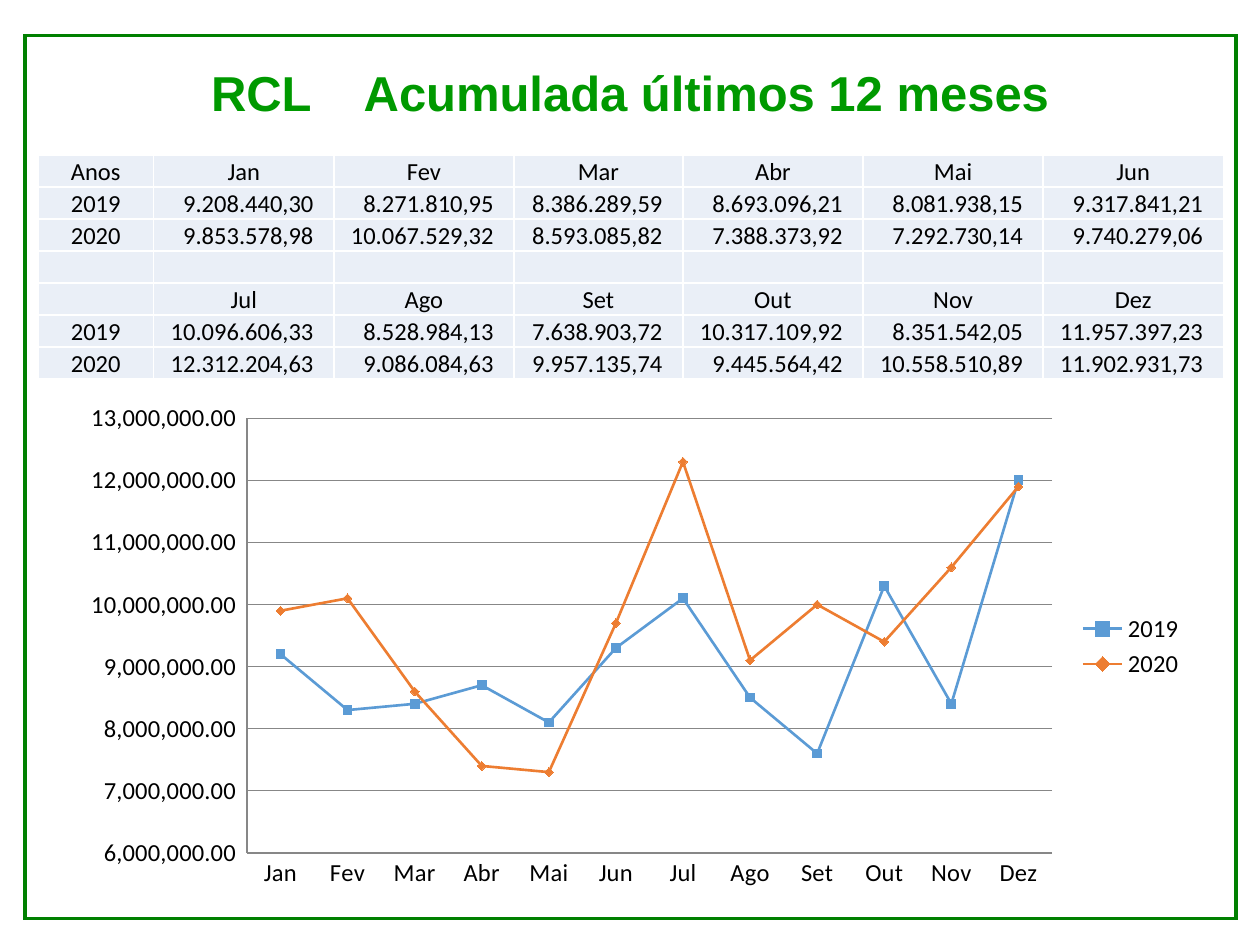
"""Build the slide on twelve-month accumulated revenue, with a table and a line chart."""
from dataclasses import dataclass

from lxml import etree
from pptx import Presentation
from pptx.chart.data import CategoryChartData
from pptx.dml.color import RGBColor
from pptx.enum.chart import XL_CHART_TYPE, XL_LEGEND_POSITION, XL_MARKER_STYLE, XL_TICK_MARK
from pptx.enum.shapes import MSO_SHAPE
from pptx.enum.text import MSO_ANCHOR, PP_ALIGN
from pptx.oxml import parse_xml
from pptx.oxml.ns import nsdecls, qn
from pptx.util import Inches, Pt

RECTANGLE = MSO_SHAPE.RECTANGLE
CENTER, RIGHT = PP_ALIGN.CENTER, PP_ALIGN.RIGHT
MIDDLE, BOTTOM = MSO_ANCHOR.MIDDLE, MSO_ANCHOR.BOTTOM
LINE_MARKERS = XL_CHART_TYPE.LINE_MARKERS
LEGEND_RIGHT = XL_LEGEND_POSITION.RIGHT
SQUARE, DIAMOND = XL_MARKER_STYLE.SQUARE, XL_MARKER_STYLE.DIAMOND
NO_TICK = XL_TICK_MARK.NONE


@dataclass(frozen=True)
class Theme:
    frame: RGBColor = RGBColor(0x00, 0x80, 0x00)
    title: RGBColor = RGBColor(0x00, 0x99, 0x00)
    text: RGBColor = RGBColor(0x00, 0x00, 0x00)
    cell: RGBColor = RGBColor(0xEA, 0xEF, 0xF7)
    border: RGBColor = RGBColor(0xFF, 0xFF, 0xFF)
    grid: RGBColor = RGBColor(0x87, 0x87, 0x87)
    series: tuple = (RGBColor(0x5B, 0x9B, 0xD5), RGBColor(0xED, 0x7D, 0x31))
    title_font: str = "Arial"
    body_font: str = "Calibri"
    title_size: Pt = Pt(28)
    body_size: Pt = Pt(14)


THEME = Theme()
MONTHS = ["Jan", "Fev", "Mar", "Abr", "Mai", "Jun",
          "Jul", "Ago", "Set", "Out", "Nov", "Dez"]
REVENUE = {
    "2019": [9208440.30, 8271810.95, 8386289.59, 8693096.21, 8081938.15, 9317841.21,
             10096606.33, 8528984.13, 7638903.72, 10317109.92, 8351542.05, 11957397.23],
    "2020": [9853578.98, 10067529.32, 8593085.82, 7388373.92, 7292730.14, 9740279.06,
             12312204.63, 9086084.63, 9957135.74, 9445564.42, 10558510.89, 11902931.73],
}
COLUMN_WIDTHS = [0.92, 1.43, 1.43, 1.34, 1.43, 1.43, 1.43]
CHART_WIDTH, CHART_HEIGHT = 9, 4.02
NUMBER_FORMAT = '_(* #,##0.00_);_(* \\(#,##0.00\\);_(* "-"??_);_(@_)'


def style_font(font, name, size, color, bold=False):
    font.name, font.size, font.bold = name, size, bold
    font.color.rgb = color


def add_frame(slide):
    sp = slide.shapes.add_shape(RECTANGLE, Inches(0.2), Inches(0.28), Inches(9.61), Inches(7.01))
    sp.shadow.inherit = False
    sp.fill.background()
    sp.line.color.rgb = THEME.frame
    sp.line.width = Pt(2)
    miter = etree.SubElement(sp.line._get_or_add_ln(), qn("a:miter"))
    miter.set("lim", "800000")


def add_title(slide, acronym, words):
    sp = slide.shapes.add_textbox(Inches(0.5), Inches(0.29), Inches(9), Inches(0.94))
    tf = sp.text_frame
    tf.word_wrap = True
    tf.vertical_anchor = MIDDLE
    p = tf.paragraphs[0]
    p.alignment, p.line_spacing = CENTER, 0.9
    for text in (acronym, " ", words):
        r = p.add_run()
        r.text = text
        style_font(r.font, THEME.title_font, THEME.title_size, THEME.title, True)
    gap = p.runs[1]
    gap._r.get_or_add_rPr().set("spc", "2200")


def brazilian(value):
    return f"{value:,.2f}".translate(str.maketrans(",.", ".,"))


def half_year(label, start):
    months = slice(start, start + 6)
    years = [[year, *map(brazilian, values[months])] for year, values in REVENUE.items()]
    return [[label, *MONTHS[months]], *years]


def add_borders(cell):
    tc_pr = cell._tc.get_or_add_tcPr()
    for i, side in enumerate(("lnL", "lnR", "lnT", "lnB")):
        tc_pr.insert(i, parse_xml(
            f'<a:{side} {nsdecls("a")} w="{Pt(1)}"><a:solidFill>'
            f'<a:srgbClr val="{THEME.border}"/></a:solidFill></a:{side}>'))


def format_cell(cell, text, is_amount):
    cell.fill.solid()
    cell.fill.fore_color.rgb = THEME.cell
    cell.vertical_anchor = BOTTOM
    cell.margin_left = cell.margin_top = Inches(0.01)
    cell.margin_right = Inches(0.16 if is_amount else 0.01)
    cell.margin_bottom = 0
    add_borders(cell)
    p = cell.text_frame.paragraphs[0]
    p.text = text
    p.alignment = RIGHT if is_amount else CENTER
    for r in p.runs:
        style_font(r.font, THEME.body_font, THEME.body_size, THEME.text)
    if not text:
        end = etree.SubElement(p._p, qn("a:endParaRPr"))
        end.set("sz", str(int(THEME.body_size.pt * 100)))


def add_revenue_table(slide):
    rows = half_year("Anos", 0) + [[""] * len(COLUMN_WIDTHS)] + half_year("", 6)
    table = slide.shapes.add_table(len(rows), len(COLUMN_WIDTHS), Inches(0.3), Inches(1.23),
                                   Inches(9.4), Inches(1.78)).table
    table.first_row = table.horz_banding = False
    for column, width in zip(table.columns, COLUMN_WIDTHS):
        column.width = Inches(width)
    for i, row in enumerate(rows):
        for j, text in enumerate(row):
            format_cell(table.cell(i, j), text, j > 0 and row[0] in REVENUE)


def format_axis(axis):
    axis.major_tick_mark = axis.minor_tick_mark = NO_TICK
    axis.format.line.color.rgb = THEME.grid
    style_font(axis.tick_labels.font, THEME.body_font, THEME.body_size, THEME.text)


def format_series(series, color, marker):
    series.smooth = False
    series.format.line.color.rgb = color
    series.format.line.width = Pt(1.5)
    series.marker.style, series.marker.size = marker, 5
    series.marker.format.fill.solid()
    series.marker.format.fill.fore_color.rgb = color
    series.marker.format.line.color.rgb = color


def place_plot(chart, left, top, width, height):
    area = chart._chartSpace.find(".//" + qn("c:plotArea"))
    for old in area.findall(qn("c:layout")):
        area.remove(old)
    area.insert(0, parse_xml(
        f'<c:layout {nsdecls("c")}><c:manualLayout><c:layoutTarget val="inner"/>'
        '<c:xMode val="edge"/><c:yMode val="edge"/>'
        f'<c:x val="{left / CHART_WIDTH}"/><c:y val="{top / CHART_HEIGHT}"/>'
        f'<c:w val="{width / CHART_WIDTH}"/><c:h val="{height / CHART_HEIGHT}"/>'
        '</c:manualLayout></c:layout>'))


def add_revenue_chart(slide):
    data = CategoryChartData(number_format=NUMBER_FORMAT)
    data.categories = MONTHS
    for year, values in REVENUE.items():
        data.add_series(year, [round(value, -5) for value in values])
    chart = slide.shapes.add_chart(LINE_MARKERS, Inches(0.5), Inches(3.12),
                                   Inches(CHART_WIDTH), Inches(CHART_HEIGHT), data).chart
    style_font(chart.font, THEME.body_font, Pt(10), THEME.text)
    chart.has_title = False
    chart.has_legend = True
    chart.legend.position = LEGEND_RIGHT
    chart.legend.include_in_layout = False
    style_font(chart.legend.font, THEME.body_font, THEME.body_size, THEME.text)
    format_axis(chart.category_axis)
    axis = chart.value_axis
    format_axis(axis)
    axis.minimum_scale, axis.maximum_scale, axis.major_unit = 6000000, 13000000, 1000000
    axis.major_gridlines.format.line.color.rgb = THEME.grid
    axis.tick_labels.number_format = NUMBER_FORMAT
    axis.tick_labels.number_format_is_linked = False
    chart.plots[0].vary_by_categories = False
    for series, color, marker in zip(chart.plots[0].series, THEME.series, (SQUARE, DIAMOND)):
        format_series(series, color, marker)
    place_plot(chart, 1.46, 0.2, 6.39, 3.45)


def main():
    prs = Presentation()
    prs.slide_width, prs.slide_height = Inches(10), Inches(7.5)
    slide = prs.slides.add_slide(prs.slide_layouts[6])
    add_frame(slide)
    add_title(slide, "RCL", "Acumulada últimos 12 meses")
    add_revenue_table(slide)
    add_revenue_chart(slide)
    prs.save("out.pptx")


if __name__ == "__main__":
    main()
